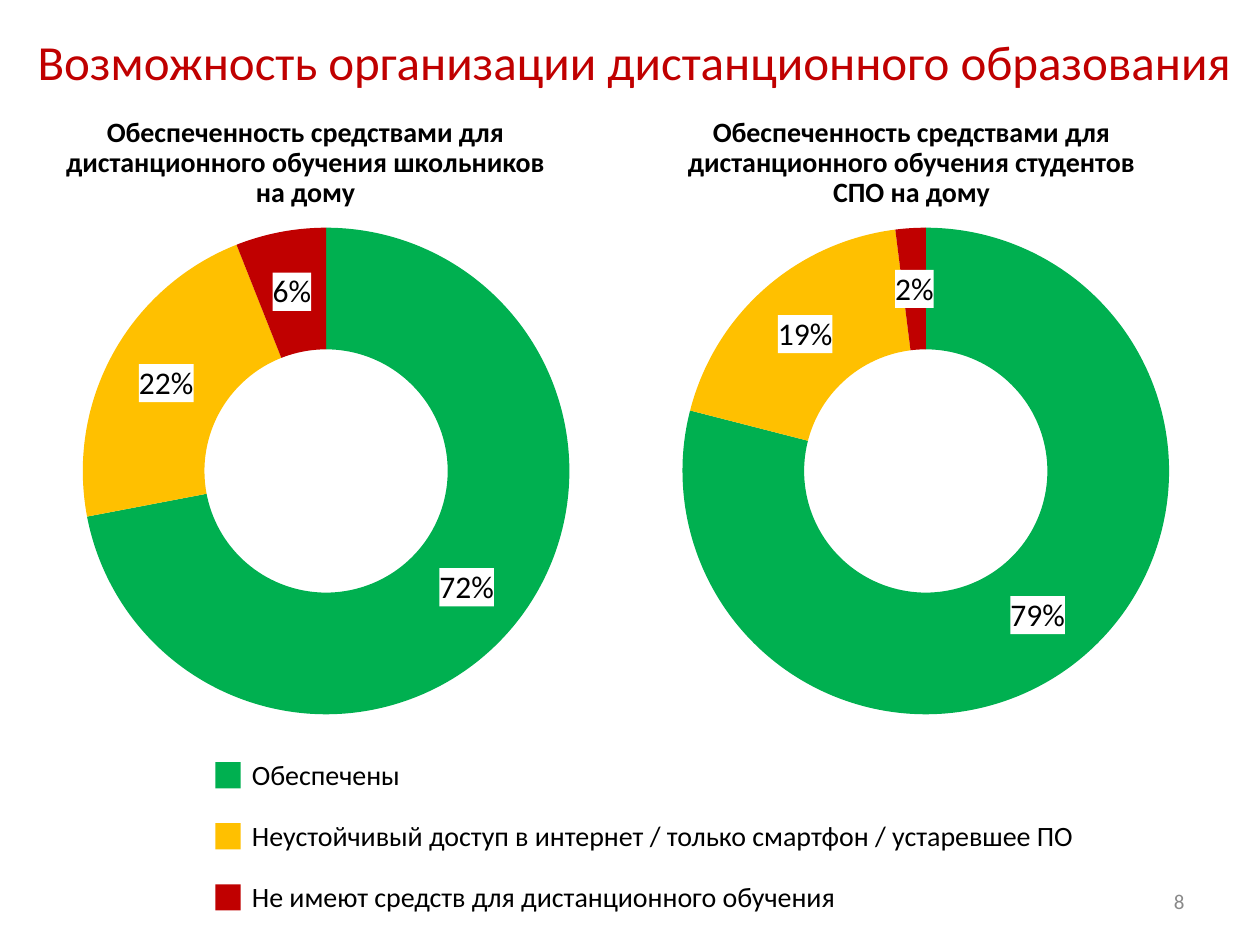
from dataclasses import dataclass

from pptx import Presentation
from pptx.chart.data import CategoryChartData
from pptx.dml.color import RGBColor
from pptx.enum.chart import XL_CHART_TYPE
from pptx.enum.shapes import MSO_SHAPE
from pptx.enum.text import MSO_ANCHOR, PP_ALIGN
from pptx.oxml import parse_xml
from pptx.oxml.ns import nsdecls, qn
from pptx.util import Pt


@dataclass(frozen=True)
class Theme:
    font: str = "Calibri"
    title: str = "C00000"
    text: str = "000000"
    muted: str = "898989"
    slices: tuple = ("00B050", "FFC000", "C00000")
    title_size: int = 28
    label_size: int = 18
    body_size: int = 16
    number_size: int = 12


THEME = Theme()
LEGEND = (
    "Обеспечены",
    "Неустойчивый доступ в интернет / только смартфон / устаревшее ПО",
    "Не имеют средств для дистанционного обучения",
)
# Panel left, panel top, heading inset, heading, shares
PANELS = (
    (20.2, 64.1, 4.3, "Обеспеченность средствами для дистанционного обучения школьников на дому",
     (0.72, 0.22, 0.06)),
    (362.9, 64.1, 7.9, "Обеспеченность средствами для дистанционного обучения студентов СПО на дому",
     (0.79, 0.19, 0.02)),
)


def style_font(font, size, color=THEME.text, bold=False):
    font.name = THEME.font
    font.size = Pt(size)
    font.bold = bold
    font.color.rgb = RGBColor.from_string(color)


def add_text(page, box, text, size, color=THEME.text, bold=False,
             align=PP_ALIGN.LEFT, anchor=MSO_ANCHOR.TOP, wrap=True, inset=True):
    frame = page.shapes.add_textbox(*map(Pt, box)).text_frame
    frame.word_wrap = wrap
    frame.vertical_anchor = anchor
    if not inset:
        frame.margin_left = frame.margin_right = frame.margin_top = frame.margin_bottom = 0
    para = frame.paragraphs[0]
    para.text = text
    para.alignment = align
    style_font(para.font, size, color, bold)
    return para


def place_plot(chart, left, top, width, height):
    """Fix the inner plot area, as fractions of the chart."""
    area = chart.element.find(".//" + qn("c:plotArea"))
    for layout in area.findall(qn("c:layout")):
        area.remove(layout)
    sizes = "".join(f'<c:{name} val="{value}"/>' for name, value in
                    zip("xywh", (left, top, width, height)))
    area.insert(0, parse_xml(
        f'<c:layout {nsdecls("c")}><c:manualLayout><c:layoutTarget val="inner"/>'
        f'<c:xMode val="edge"/><c:yMode val="edge"/>{sizes}</c:manualLayout></c:layout>'))


def add_doughnut(page, box, shares):
    data = CategoryChartData(number_format="0%")
    data.categories = ["1", "2", "3"]
    data.add_series("Series 1", shares)
    chart = page.shapes.add_chart(XL_CHART_TYPE.DOUGHNUT, *map(Pt, box), data).chart
    chart.has_title = False
    chart.has_legend = False
    style_font(chart.font, THEME.label_size)
    place_plot(chart, 0.084, 0.017, 0.862, 0.701)
    chart.plots[0].vary_by_categories = True

    series = chart.plots[0].series[0]
    for index, color in enumerate(THEME.slices):
        look = series.points[index].format
        look.fill.solid()
        look.fill.fore_color.rgb = RGBColor.from_string(color)
        look.line.fill.background()

    # Share labels on white patches
    labels = series.data_labels
    labels.show_value = True
    labels.show_percentage = False
    labels.number_format = "0%"
    labels.number_format_is_linked = False
    style_font(labels.font, THEME.label_size)
    labels._element.find(qn("c:numFmt")).addnext(parse_xml(
        f'<c:spPr {nsdecls("c", "a")}><a:solidFill><a:srgbClr val="FFFFFF"/></a:solidFill></c:spPr>'))


def add_panel(page, left, top, heading_inset, heading, shares):
    para = add_text(page, (left + heading_inset, top, 300.2, 59.8), heading,
                    THEME.body_size, bold=True, align=PP_ALIGN.CENTER)
    para.line_spacing = 0.9
    add_doughnut(page, (left, top + 59.3, 322.6, 396.7), shares)


def add_legend(page, left, top, step):
    for index, (color, label) in enumerate(zip(THEME.slices, LEGEND)):
        row = top + index * step
        swatch = page.shapes.add_shape(MSO_SHAPE.RECTANGLE, Pt(left), Pt(row + 2.6), Pt(14.4), Pt(15))
        swatch.shadow.inherit = False
        swatch.fill.solid()
        swatch.fill.fore_color.rgb = RGBColor.from_string(color)
        swatch.line.fill.background()
        add_text(page, (left + 20.9, row, 476, 19.4), label, THEME.body_size,
                 wrap=True, inset=False)


def main():
    deck = Presentation()
    deck.slide_width, deck.slide_height = Pt(720), Pt(540)
    page = deck.slides.add_slide(deck.slide_layouts[6])

    # Title
    add_text(page, (14.4, 9.4, 697.7, 51.1), "Возможность организации дистанционного образования",
             THEME.title_size, THEME.title, anchor=MSO_ANCHOR.MIDDLE)

    # Charts with headings
    for panel in PANELS:
        add_panel(page, *panel)

    # Shared legend
    add_legend(page, 123.1, 432.9, 34.9)

    # Page number
    add_text(page, (516.2, 500.4, 167.8, 28.8), "8", THEME.number_size, THEME.muted,
             align=PP_ALIGN.RIGHT, anchor=MSO_ANCHOR.MIDDLE)

    deck.save("out.pptx")


if __name__ == "__main__":
    main()
